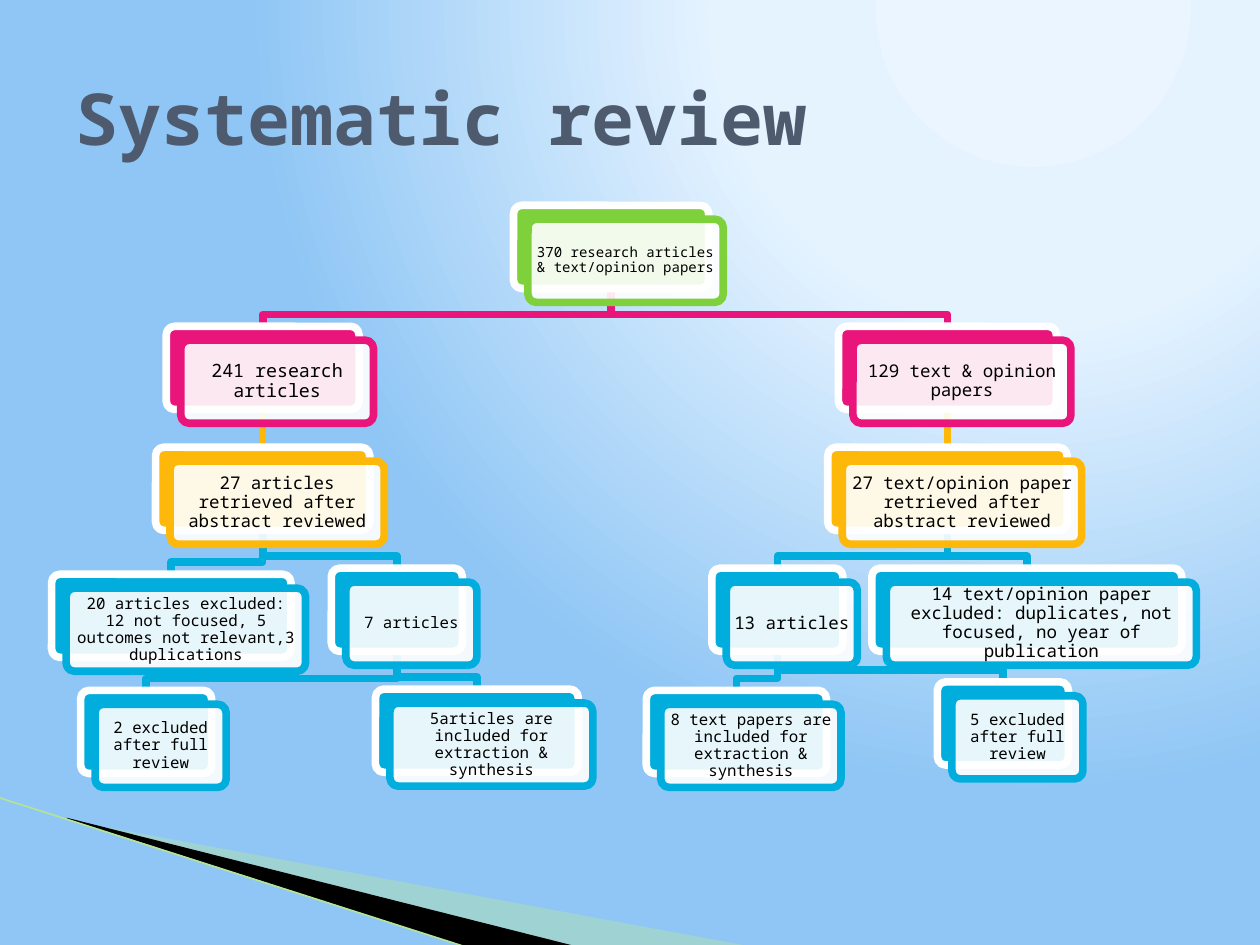
from lxml import etree
from pptx import Presentation, util as u
from pptx.dml.color import RGBColor
from pptx.enum import shapes, text
from pptx.oxml.ns import qn

HUES = {
    "black": "000000", "white": "FFFFFF", "slate": "4E5B6F",
    "green": "7FD13B", "pink": "EA157A", "gold": "FEB80A", "blue": "00ADDC",
    "mint": "B8E7A1", "lime": "B1E399",
    "glow": "EAF5FF", "pale": "E5F3FF", "sky": "8FC6F5",
}
LEVELS = ["green", "pink", "gold", "blue"]
COLS, ROWS = 100, 75
TOP, STEP, HIGH = 16.3, 9.6, 6.6

NODES = {
    "all": (None, 0, 48.5, 15.5, 8, "370 research articles & text/opinion papers"),
    "res": ("all", 1, 20.85, 15.3, 10.5, "241 research articles"),
    "got": ("res", 2, 20.85, 17, 10, "27 articles retrieved after abstract reviewed"),
    "cut": ("got", 3.05, 13.6, 19, 9,
            "20 articles excluded: 12 not focused, 5 outcomes not relevant,3 duplications"),
    "left": ("got", 3, 31.5, 10.4, 9, "7 articles"),
    "drop": ("left", 4.01, 11.6, 10.4, 9, "2 excluded after full review"),
    "kept": ("left", 4, 37.85, 16.1, 9,
             "5articles are included for extraction & synthesis"),
    "opin": ("all", 1, 75.2, 17.3, 10, "129 text & opinion papers"),
    "read": ("opin", 2, 75.2, 19, 10,
             "27 text/opinion paper retrieved after abstract reviewed"),
    "some": ("read", 3, 61.7, 10.4, 10, "13 articles"),
    "used": ("some", 4.01, 58.45, 14.3, 9,
             "8 text papers are included for extraction & synthesis"),
    "lost": ("some", 3.94, 79.6, 10.4, 9, "5 excluded after full review"),
    "out": ("read", 3, 81.5, 24.6, 10,
            "14 text/opinion paper excluded: duplicates, not focused, no year of publication"),
}


class Deck:
    """Holds the style and the current slide, and draws each kind of element."""

    def __init__(self):
        self.prs = Presentation()
        self.prs.slide_width, self.prs.slide_height = u.Inches(10), u.Inches(7.5)
        self.font, self.thick = "Noto Sans Mono", 4.33
        self.slide = self.prs.slides.add_slide(self.prs.slide_layouts[6])
        self.items = self.slide.shapes

    def x(self, col):
        return round(self.prs.slide_width * col / COLS)

    def y(self, row):
        return round(self.prs.slide_height * row / ROWS)

    def spot(self, left, top, wide, high):
        return self.x(left), self.y(top), self.x(wide), self.y(high)

    def hue(self, name):
        return RGBColor.from_string(HUES[name])

    def paint(self, item, name, alpha=None):
        item.fill.solid()
        item.fill.fore_color.rgb = self.hue(name)
        if alpha:
            tint = item.element.spPr.find(qn("a:solidFill"))[0]
            etree.SubElement(tint, qn("a:alpha"), val=str(alpha * 1000))

    def edge(self, item, name, thick):
        item.line.color.rgb = self.hue(name)
        item.line.width = u.Pt(thick)

    def glow(self, stops, focus):
        fill = self.slide.background.fill
        fill.gradient()
        grad = self.slide.element.find(".//" + qn("a:gradFill"))
        for part in list(grad):
            grad.remove(part)
        band = etree.SubElement(grad, qn("a:gsLst"))
        for pos, name in stops:
            stop = etree.SubElement(band, qn("a:gs"), pos=str(pos * 1000))
            etree.SubElement(stop, qn("a:srgbClr"), val=HUES[name])
        ring = etree.SubElement(grad, qn("a:path"), {"path": "circle"})
        sides = {side: str(n * 1000) for side, n in zip("ltrb", focus)}
        etree.SubElement(ring, qn("a:fillToRect"), sides)

    def trace(self, points, close):
        first, *rest = [(self.x(a), self.y(b)) for a, b in points]
        pen = self.items.build_freeform(*first)
        pen.add_line_segments(rest, close=close)
        item = pen.convert_to_shape()
        item.shadow.inherit = False
        return item

    def wedge(self, points, name, alpha=None):
        item = self.trace(points, True)
        self.paint(item, name, alpha)
        item.line.fill.background()

    def line(self, start, end, name, thick):
        item = self.items.add_connector(
            shapes.MSO_CONNECTOR.STRAIGHT,
            self.x(start[0]), self.y(start[1]), self.x(end[0]), self.y(end[1]))
        self.edge(item, name, thick)
        etree.SubElement(item.element.spPr, qn("a:effectLst"))
        return item

    def elbow(self, start, end, name):
        bend = end[1] - 0.95
        item = self.trace([start, (start[0], bend), (end[0], bend), end], False)
        item.fill.background()
        self.edge(item, name, self.thick)
        return item

    def label(self, frame, words, size, name, bold=False):
        frame.word_wrap = True
        frame.vertical_anchor = text.MSO_ANCHOR.MIDDLE
        para = frame.paragraphs[0]
        run = para.add_run()
        run.text = words
        run.font.name, run.font.size, run.font.bold = self.font, u.Pt(size), bold
        run.font.color.rgb = self.hue(name)
        return para

    def title(self, words):
        box = self.items.add_textbox(*self.spot(5, 3, 90, 12.5))
        self.label(box.text_frame, words, 41, "slate", True)

    def plate(self, spot, fill, line, alpha=None):
        item = self.items.add_shape(
            shapes.MSO_SHAPE.ROUNDED_RECTANGLE, *self.spot(*spot))
        item.adjustments[0] = 0.1
        item.shadow.inherit = False
        self.paint(item, fill, alpha)
        self.edge(item, line, self.thick)
        return item

    def card(self, left, top, wide, name, words, size):
        back = self.plate((left, top, wide, HIGH), name, "white")
        front = self.plate((left + 1.15, top + 1.1, wide, HIGH), "white", name, 90)
        frame = front.text_frame
        frame.margin_left = frame.margin_right = self.x(0.4)
        frame.margin_top = frame.margin_bottom = self.y(0.4)
        para = self.label(frame, words, size, "black")
        para.alignment = text.PP_ALIGN.CENTER
        para.line_spacing = 0.9
        return back

    def tree(self, nodes):
        backs, tops, tints = {}, {}, {}
        for key, (_, level, mid, wide, size, words) in nodes.items():
            tops[key] = TOP + STEP * level
            tints[key] = LEVELS[min(int(level), 3)]
            backs[key] = self.card(
                mid - wide / 2, tops[key], wide, tints[key], words, size)
        floor = next(iter(backs.values())).element
        for key, (boss, _, mid, *_) in reversed(nodes.items()):
            if boss is None:
                continue
            start, end = (nodes[boss][2], tops[boss] + HIGH), (mid, tops[key])
            if start[0] == mid:
                link = self.line(start, end, tints[key], self.thick)
                link.begin_connect(backs[boss], 2)
                link.end_connect(backs[key], 0)
            else:
                link = self.elbow(start, end, tints[key])
            floor.addprevious(link.element)


def main():
    deck = Deck()
    deck.glow([(0, "glow"), (40, "pale"), (100, "sky")], (65, 0, 0, 98))
    deck.wedge([(5.5, 65.1), (59.5, 75.1), (45.6, 75.1), (5.5, 65)], "mint", 40)
    deck.wedge([(5.3, 64.9), (45.7, 75.1), (37.2, 75.2), (5.4, 65)], "black")
    deck.line((-0.1, 63.3), (37.1, 75.2), "lime", 0.95)
    deck.tree(NODES)
    deck.title("Systematic review")
    deck.prs.save("out.pptx")


if __name__ == "__main__":
    main()
